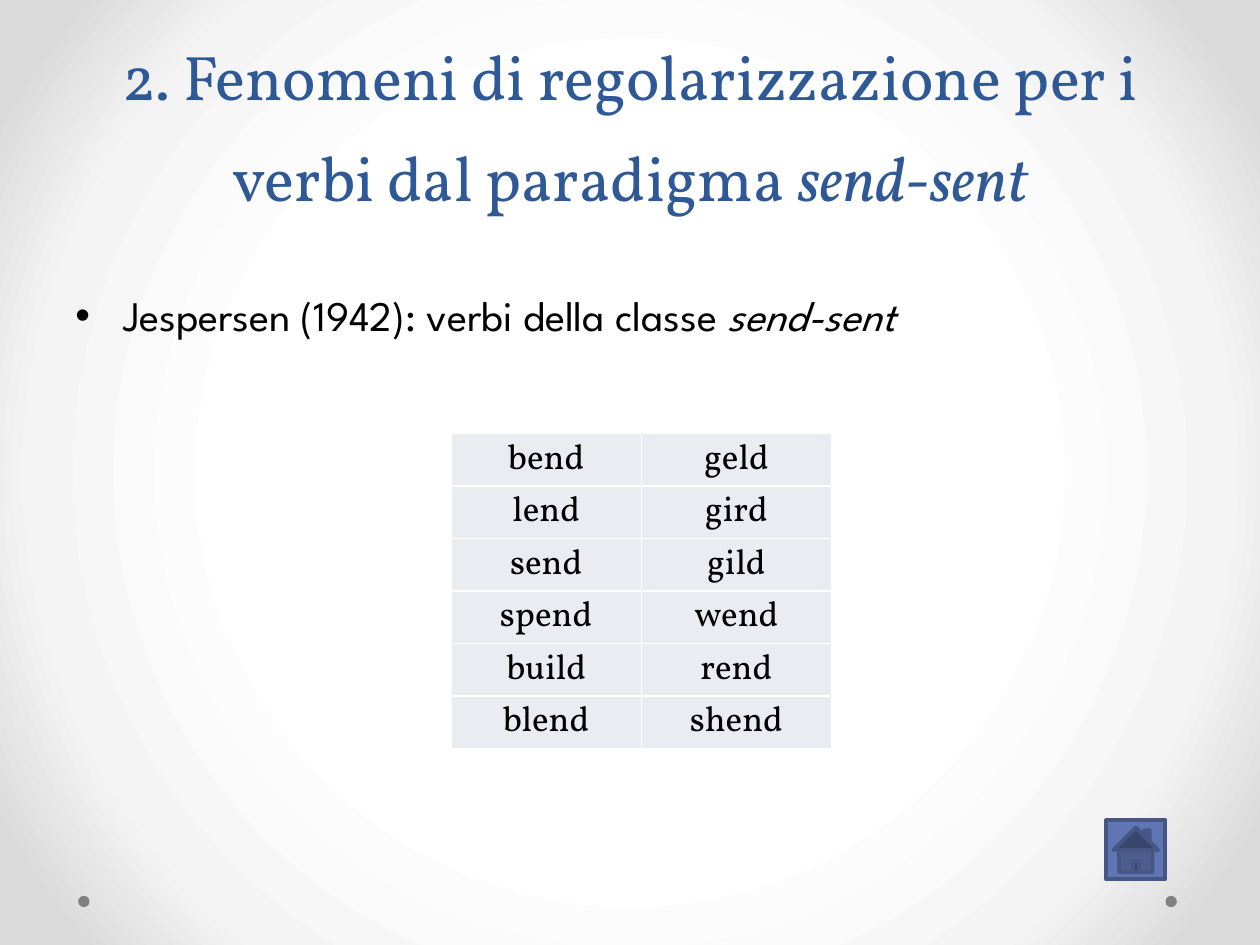
"""Builds a slide on regularised verbs of the send-sent class."""
from dataclasses import dataclass

from lxml.etree import SubElement
from pptx import Presentation
from pptx.dml.color import RGBColor
from pptx.enum.shapes import MSO_SHAPE as Shape
from pptx.enum.text import MSO_ANCHOR as Anchor, PP_ALIGN as Align
from pptx.oxml.ns import qn
from pptx.util import Inches, Pt


@dataclass(frozen=True)
class Theme:
    title: str = "2F5897"
    text: str = "000000"
    dot: str = "808080"
    cell: str = "EAECF2"
    border: str = "FFFFFF"
    button: str = "6076B4"
    button_line: str = "475785"
    backdrop: tuple = ((50, "FFFFFF"), (76, "F4F4F4"), (92, "DADADA"))
    serif: str = "Vollkorn"
    sans: str = "League Spartan"
    title_size: int = 36
    body_size: int = 24
    cell_size: int = 20


def add_text(para, text, font, size, color, italic=False):
    span = para.add_run()
    span.text = text
    span.font.name = font
    span.font.size = Pt(size)
    span.font.italic = italic
    span.font.color.rgb = RGBColor.from_string(color)


def add_tag(parent, tag, **attributes):
    return SubElement(parent, qn(tag), {key: str(value) for key, value in attributes.items()})


theme = Theme()
deck = Presentation()
deck.slide_width, deck.slide_height = Inches(10), Inches(7.5)
page = deck.slides.add_slide(deck.slide_layouts[6])

page.background.fill.gradient()
gradient = next(page.element.iter(qn("a:gradFill")))
for child in list(gradient):
    gradient.remove(child)
stops = add_tag(gradient, "a:gsLst")
for percent, color in theme.backdrop:
    add_tag(add_tag(stops, "a:gs", pos=percent * 1000), "a:srgbClr", val=color)
circle = add_tag(gradient, "a:path", path="circle")
add_tag(circle, "a:fillToRect", l=50000, t=50000, r=50000, b=50000)

for left in (9.25, 0.62):
    dot = page.shapes.add_shape(Shape.OVAL, Inches(left), Inches(7.11), Inches(0.09), Inches(0.09))
    dot.shadow.inherit = False
    dot.fill.solid()
    dot.fill.fore_color.rgb = RGBColor.from_string(theme.dot)
    dot.line.fill.background()

title = page.shapes.add_textbox(Inches(0.5), Inches(0), Inches(9), Inches(1.75)).text_frame
title.word_wrap = True
title.vertical_anchor = Anchor.BOTTOM
para = title.paragraphs[0]
para.alignment = Align.CENTER
para.line_spacing = Pt(58)
heading = {"font": theme.serif, "size": theme.title_size, "color": theme.title}
add_text(para, "2. Fenomeni di regolarizzazione per i verbi dal paradigma ", **heading)
add_text(para, "send-sent", italic=True, **heading)

body = page.shapes.add_textbox(Inches(0.5), Inches(1.75), Inches(9), Inches(4.95)).text_frame
body.word_wrap = True
body.vertical_anchor = Anchor.MIDDLE
body.margin_bottom = Inches(3.5)
para = body.paragraphs[0]
indent = Inches(0.38)
properties = para._p.get_or_add_pPr()
properties.set("marL", str(indent))
properties.set("indent", str(-indent))
add_tag(properties, "a:buFont", typeface="Arial")
add_tag(properties, "a:buChar", char="•")
bullet = {"font": theme.sans, "size": theme.body_size, "color": theme.text}
add_text(para, "Jespersen (1942): verbi della classe ", **bullet)
add_text(para, "send-sent", italic=True, **bullet)

verbs = (
    ("bend", "geld"),
    ("lend", "gird"),
    ("send", "gild"),
    ("spend", "wend"),
    ("build", "rend"),
    ("blend", "shend"),
)
table = page.shapes.add_table(
    len(verbs), 2, Inches(3.58), Inches(3.44), Inches(3.02), Inches(2.5)
).table
table.first_row = table.horz_banding = False
for row, pair in enumerate(verbs):
    for column, verb in enumerate(pair):
        cell = table.cell(row, column)
        cell.vertical_anchor = Anchor.MIDDLE
        cell.margin_left = cell.margin_right = cell.margin_top = Inches(0.01)
        cell.margin_bottom = 0
        para = cell.text_frame.paragraphs[0]
        para.alignment = Align.CENTER
        add_text(para, verb, theme.serif, theme.cell_size, theme.text)
        properties = cell._tc.get_or_add_tcPr()
        for side in ("L", "R", "T", "B"):
            border = add_tag(properties, f"a:ln{side}", w=Pt(1))
            add_tag(add_tag(border, "a:solidFill"), "a:srgbClr", val=theme.border)
        cell.fill.solid()
        cell.fill.fore_color.rgb = RGBColor.from_string(theme.cell)

home = page.shapes.add_shape(
    Shape.ACTION_BUTTON_HOME, Inches(8.78), Inches(6.51), Inches(0.47), Inches(0.47)
)
home.shadow.inherit = False
home.fill.solid()
home.fill.fore_color.rgb = RGBColor.from_string(theme.button)
home.line.color.rgb = RGBColor.from_string(theme.button_line)
home.line.width = Pt(2.25)

deck.save("out.pptx")
